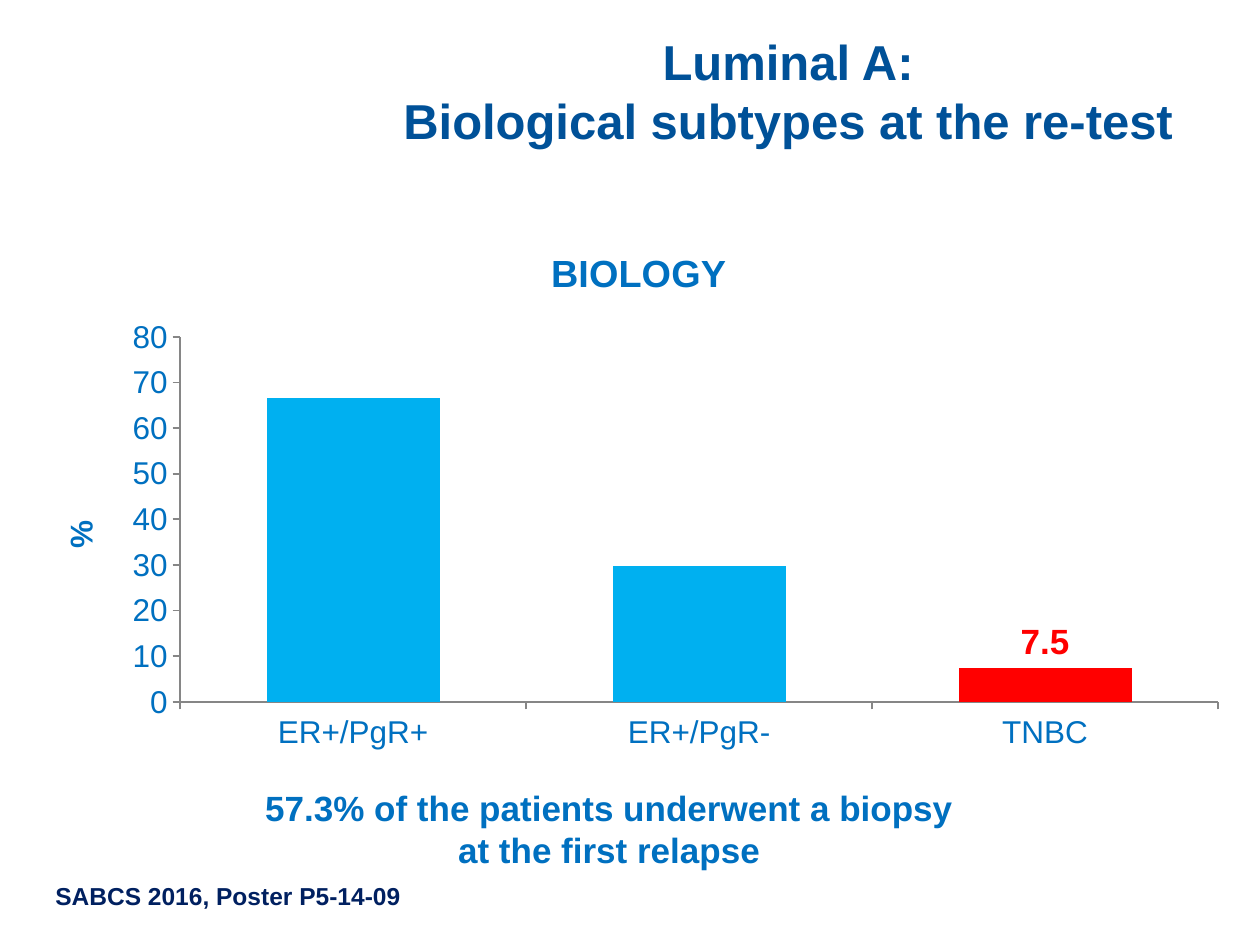
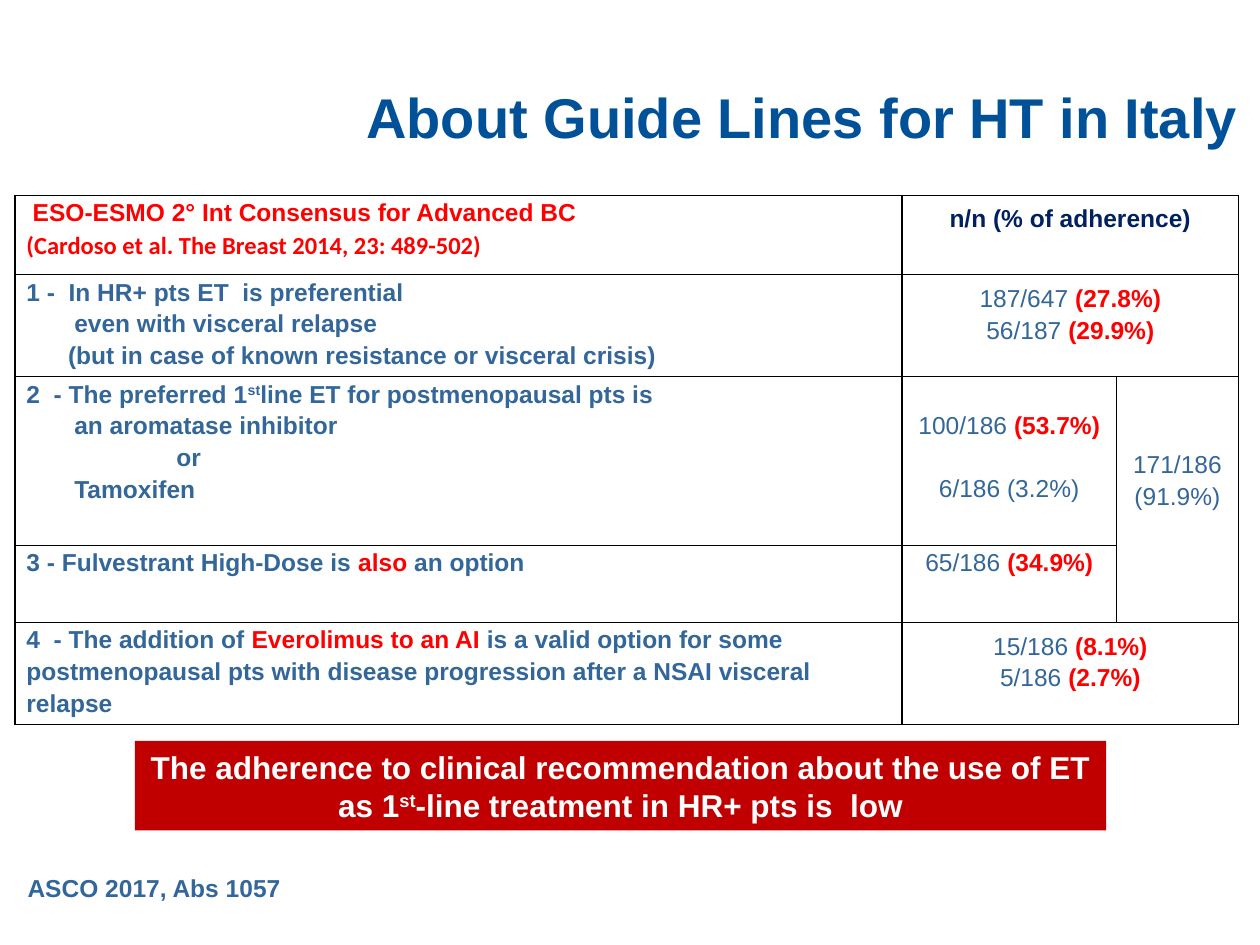
"""Build two slides on luminal A re-testing and hormone therapy guidelines."""
from dataclasses import dataclass, field

from lxml import etree
from pptx import Presentation
from pptx.chart.data import CategoryChartData
from pptx.dml.color import RGBColor
from pptx.enum.chart import XL_CHART_TYPE, XL_LABEL_POSITION, XL_TICK_MARK
from pptx.enum.shapes import MSO_SHAPE
from pptx.enum.text import MSO_ANCHOR, MSO_AUTO_SIZE, PP_ALIGN
from pptx.oxml import parse_xml
from pptx.oxml.ns import nsdecls, qn
from pptx.util import Inches, Pt

LEFT, CENTER, RIGHT = PP_ALIGN.LEFT, PP_ALIGN.CENTER, PP_ALIGN.RIGHT
TOP, MIDDLE = MSO_ANCHOR.TOP, MSO_ANCHOR.MIDDLE
OUTSIDE_END = XL_LABEL_POSITION.OUTSIDE_END
TICK_OUTSIDE = XL_TICK_MARK.OUTSIDE
COLUMNS = XL_CHART_TYPE.COLUMN_CLUSTERED
RECTANGLE = MSO_SHAPE.RECTANGLE
FIXED = MSO_AUTO_SIZE.NONE

GRID_COLUMNS, GRID_ROWS = 100, 75
UNIT = Inches(0.1)
TITLE_ONLY = 5


def style(color, size, bold=True, name="Arial"):
    """Return the format values of one kind of text."""
    return {"color": color, "size": Pt(size), "bold": bold, "name": name}


@dataclass(frozen=True)
class Theme:
    """Colours and text styles shared by the slides."""

    white: str = "FFFFFF"
    border: str = "000000"
    axis: str = "868686"
    bar: str = "00B0F0"
    highlight: str = "FF0000"
    banner: str = "C00000"
    styles: dict = field(default_factory=lambda: {
        "title": style("005198", 28),
        "large title": style("005198", 32),
        "chart title": style("0070C0", 21.6),
        "axis title": style("0070C0", 18),
        "axis": style("0070C0", 18, False),
        "value": style("0070C0", 20, False),
        "low value": style("FF0000", 20),
        "remark": style("0070C0", 20),
        "navy": style("002060", 14),
        "body": style("336699", 14),
        "plain": style("336699", 14, False),
        "alert": style("FF0000", 14),
        "citation": style("FF0000", 14, name="Calibri"),
        "banner": style("FFFFFF", 18),
    })


THEME = Theme()


@dataclass(frozen=True)
class Line:
    """One paragraph: (text, style) runs, indent in grid units, gap in points."""

    runs: tuple
    indent: float = 0
    gap: float = 0


@dataclass(frozen=True)
class Entry:
    """Content and placing of one table cell."""

    row: int
    column: int
    lines: tuple
    align: int = CENTER
    top: float = 0.5
    span: tuple = (1, 1)


def line(text, style_name="body", indent=0, gap=0):
    """Return a paragraph in a single style."""
    return Line(((text, style_name),), indent, gap)


def adherence(count, percent, gap=0):
    """Return a count followed by its highlighted percentage."""
    return Line(((count + " ", "plain"), (percent, "alert")), gap=gap)


GUIDELINES = (
    Entry(0, 0, (
        line("ESO-ESMO 2° Int Consensus for Advanced BC", "alert", 0.5),
        line("(Cardoso et al. The Breast 2014, 23: 489-502)", "citation")), LEFT, 0),
    Entry(0, 1, (line("n/n (% of adherence)", "navy"),), span=(1, 2)),
    Entry(1, 0, (
        line("1 -  In HR+ pts ET  is preferential"),
        line("even with visceral relapse", indent=3.8),
        line("(but in case of known resistance or visceral crisis)", indent=3.3)), LEFT, 0),
    Entry(1, 1, (adherence("187/647", "(27.8%)"), adherence("56/187", "(29.9%)")), span=(1, 2)),
    Entry(2, 0, (
        Line((("2  - The preferred 1", "body"), ("st", "body", "super"),
              ("line ET for postmenopausal pts is", "body"))),
        line("an aromatase inhibitor", indent=3.8),
        line("or", indent=11.9),
        line("Tamoxifen", indent=3.8)), LEFT, 0),
    Entry(2, 1, (adherence("100/186", "(53.7%)"), line("6/186 (3.2%)", "plain", gap=18)), top=2.5),
    Entry(2, 2, (line("171/186", "plain"), line("(91.9%)", "plain")), top=5.6, span=(2, 1)),
    Entry(3, 0, (Line((("3 - Fulvestrant High-Dose is ", "body"), ("also", "alert"),
                       (" an option", "body"))),), LEFT, 0),
    Entry(3, 1, (adherence("65/186", "(34.9%)"),), top=0),
    Entry(4, 0, (Line((
        ("4  - The addition of ", "body"), ("Everolimus to an AI ", "alert"),
        ("is a valid option for some postmenopausal pts with disease progression "
         "after a NSAI visceral relapse", "body"))),), LEFT, 0),
    Entry(4, 1, (adherence("15/186", "(8.1%)"), adherence("5/186", "(2.7%)")), span=(1, 2)),
)


def grid(*counts):
    """Turn grid counts into slide lengths."""
    return [round(count * UNIT) for count in counts]


def rgb(color):
    """Turn a hex string into a colour."""
    return RGBColor.from_string(color)


def assign(target, values):
    """Set attributes from a dict of format values."""
    for name, value in values.items():
        setattr(target, name, value)


def format_font(font, style_name):
    """Apply a theme style to a font."""
    values = dict(THEME.styles[style_name])
    font.color.rgb = rgb(values.pop("color"))
    assign(font, values)


def paint(fill, color):
    """Fill with one solid colour."""
    fill.solid()
    fill.fore_color.rgb = rgb(color)


def write_lines(frame, lines, align=LEFT, spacing=1.0):
    """Write styled paragraphs into a text frame."""
    for index, content in enumerate(lines):
        paragraph = frame.paragraphs[0] if index == 0 else frame.add_paragraph()
        assign(paragraph, {"alignment": align, "line_spacing": spacing})
        if content.gap:
            paragraph.space_before = Pt(content.gap)
        if content.indent:
            paragraph._p.get_or_add_pPr().set("marL", str(grid(content.indent)[0]))
        for text, style_name, *raised in content.runs:
            run = paragraph.add_run()
            run.text = text
            format_font(run.font, style_name)
            if raised:
                run._r.get_or_add_rPr().set("baseline", "30000")


def add_title(slide, box, text, style_name, align, anchor):
    """Place and format the title placeholder."""
    title = slide.shapes.title
    assign(title, dict(zip(("left", "top", "width", "height"), grid(*box))))
    frame = title.text_frame
    assign(frame, {"margin_left": 0, "margin_right": 0, "margin_top": 0, "margin_bottom": 0,
                   "vertical_anchor": anchor, "auto_size": FIXED, "word_wrap": True})
    frame.text = text
    paragraph = frame.paragraphs[0]
    paragraph.alignment = align
    for run in paragraph.runs:
        format_font(run.font, style_name)


def add_note(slide, box, lines, align=LEFT):
    """Add free-standing text on one line per paragraph."""
    frame = slide.shapes.add_textbox(*grid(*box)).text_frame
    frame.word_wrap = False
    write_lines(frame, lines, align)


def add_banner(slide, box, lines):
    """Add the coloured conclusion bar."""
    banner = slide.shapes.add_shape(RECTANGLE, *grid(*box))
    banner.shadow.inherit = False
    paint(banner.fill, THEME.banner)
    banner.line.fill.background()
    assign(banner.text_frame, {"word_wrap": True, "vertical_anchor": MIDDLE})
    write_lines(banner.text_frame, lines, CENTER)


def set_plot_area(chart, shares):
    """Fix the inner plot area as shares of the chart."""
    plot_area = chart._chartSpace.chart.plotArea
    for old in plot_area.findall(qn("c:layout")):
        plot_area.remove(old)
    places = "".join(f'<c:{key} val="{value}"/>' for key, value in shares.items())
    plot_area.insert(0, parse_xml(
        f'<c:layout {nsdecls("c")}><c:manualLayout><c:layoutTarget val="inner"/>'
        f'<c:xMode val="edge"/><c:yMode val="edge"/>{places}</c:manualLayout></c:layout>'))


def add_chart_title(owner, text, style_name):
    """Give a chart or an axis its title."""
    owner.has_title = True
    frame = (owner.chart_title if hasattr(owner, "chart_title") else owner.axis_title).text_frame
    write_lines(frame, [line(text, style_name)], CENTER)


def add_biology_chart(slide, box):
    """Add the column chart of biological subtypes."""
    subtypes = {"ER+/PgR+": 66.7, "ER+/PgR-": 29.8, "TNBC": 7.5}
    data = CategoryChartData()
    data.categories = list(subtypes)
    data.add_series("BIOLOGY", list(subtypes.values()))
    chart = slide.shapes.add_chart(COLUMNS, *grid(*box), data).chart
    chart.has_legend = False
    format_font(chart.font, "axis")
    add_chart_title(chart, "BIOLOGY", "chart title")
    add_chart_title(chart.value_axis, "%", "axis title")
    assign(chart.value_axis, {"minimum_scale": 0, "maximum_scale": 80, "major_unit": 10})
    for axis in (chart.category_axis, chart.value_axis):
        assign(axis, {"has_major_gridlines": False, "major_tick_mark": TICK_OUTSIDE})
        format_font(axis.tick_labels.font, "axis")
        axis.format.line.color.rgb = rgb(THEME.axis)
        axis.format.line.width = Pt(1)
    plot = chart.plots[0]
    assign(plot, {"gap_width": 100, "vary_by_categories": False, "has_data_labels": True})
    assign(plot.data_labels, {"show_value": True, "position": OUTSIDE_END})
    format_font(plot.data_labels.font, "value")
    bars = plot.series[0]
    paint(bars.format.fill, THEME.bar)
    triple_negative = bars.points[len(subtypes) - 1]
    paint(triple_negative.format.fill, THEME.highlight)
    format_font(triple_negative.data_label.font, "low value")
    triple_negative.data_label.position = OUTSIDE_END
    set_plot_area(chart, {"x": 0.12, "y": 0.21, "w": 0.86, "h": 0.68})


def add_borders(cell):
    """Draw a thin line on every side of a cell."""
    properties = cell._tc.get_or_add_tcPr()
    for index, side in enumerate(("lnL", "lnR", "lnT", "lnB")):
        border = etree.Element(qn(f"a:{side}"), w=str(Pt(1)))
        fill = etree.SubElement(border, qn("a:solidFill"))
        etree.SubElement(fill, qn("a:srgbClr"), val=THEME.border)
        properties.insert(index, border)


def add_guideline_table(slide, box, widths, heights):
    """Add the table of recommendations and their adherence."""
    table = slide.shapes.add_table(len(heights), len(widths), *grid(*box)).table
    assign(table, {"first_row": False, "horz_banding": False})
    for column, width in zip(table.columns, grid(*widths)):
        column.width = width
    for row, height in zip(table.rows, grid(*heights)):
        row.height = height
    for cell in table.iter_cells():
        paint(cell.fill, THEME.white)
        add_borders(cell)
    for entry in GUIDELINES:
        cell = table.cell(entry.row, entry.column)
        if entry.span != (1, 1):
            rows, columns = entry.span
            cell.merge(table.cell(entry.row + rows - 1, entry.column + columns - 1))
        side, top = grid(0.9, entry.top)
        assign(cell, {"margin_left": side, "margin_right": side, "margin_top": top,
                      "margin_bottom": 0, "vertical_anchor": TOP})
        write_lines(cell.text_frame, entry.lines, entry.align, 1.15)


def build_subtypes(slide):
    """Build the slide on subtypes at the re-test."""
    add_title(slide, (29.2, 2.5, 66.7, 12.5), "Luminal A:\vBiological subtypes at the re-test",
              "title", CENTER, TOP)
    add_biology_chart(slide, (2.8, 17.8, 95.8, 42.6))
    add_note(slide, (19.5, 61.9, 57.7, 7.7),
             [line("57.3% of the patients underwent a biopsy", "remark"),
              line("at the first relapse", "remark")], CENTER)
    add_note(slide, (3.3, 69.4, 29.6, 3.4), [line("SABCS 2016, Poster P5-14-09", "navy")], CENTER)


def build_guidelines(slide):
    """Build the slide on guideline adherence."""
    add_title(slide, (2, 6.2, 96.3, 6), "About Guide Lines for HT in Italy",
              "large title", RIGHT, MIDDLE)
    add_note(slide, (1.2, 68.8, 22.2, 3.4), [line("ASCO 2017, Abs 1057")])
    add_guideline_table(slide, (1.2, 15.5, 97.1, 42), (70.4, 17, 9.7), (6.3, 8.1, 13.4, 6.1, 8.1))
    add_banner(slide, (10.7, 58.8, 77.1, 7.1), [Line((
        ("The adherence to clinical recommendation about the use of ET as 1", "banner"),
        ("st", "banner", "super"), ("-line treatment in HR+ pts is  low", "banner")))])


def main():
    """Create and save the presentation."""
    deck = Presentation()
    deck.slide_width, deck.slide_height = grid(GRID_COLUMNS, GRID_ROWS)
    for build in (build_subtypes, build_guidelines):
        build(deck.slides.add_slide(deck.slide_layouts[TITLE_ONLY]))
    deck.save("out.pptx")


if __name__ == "__main__":
    main()
